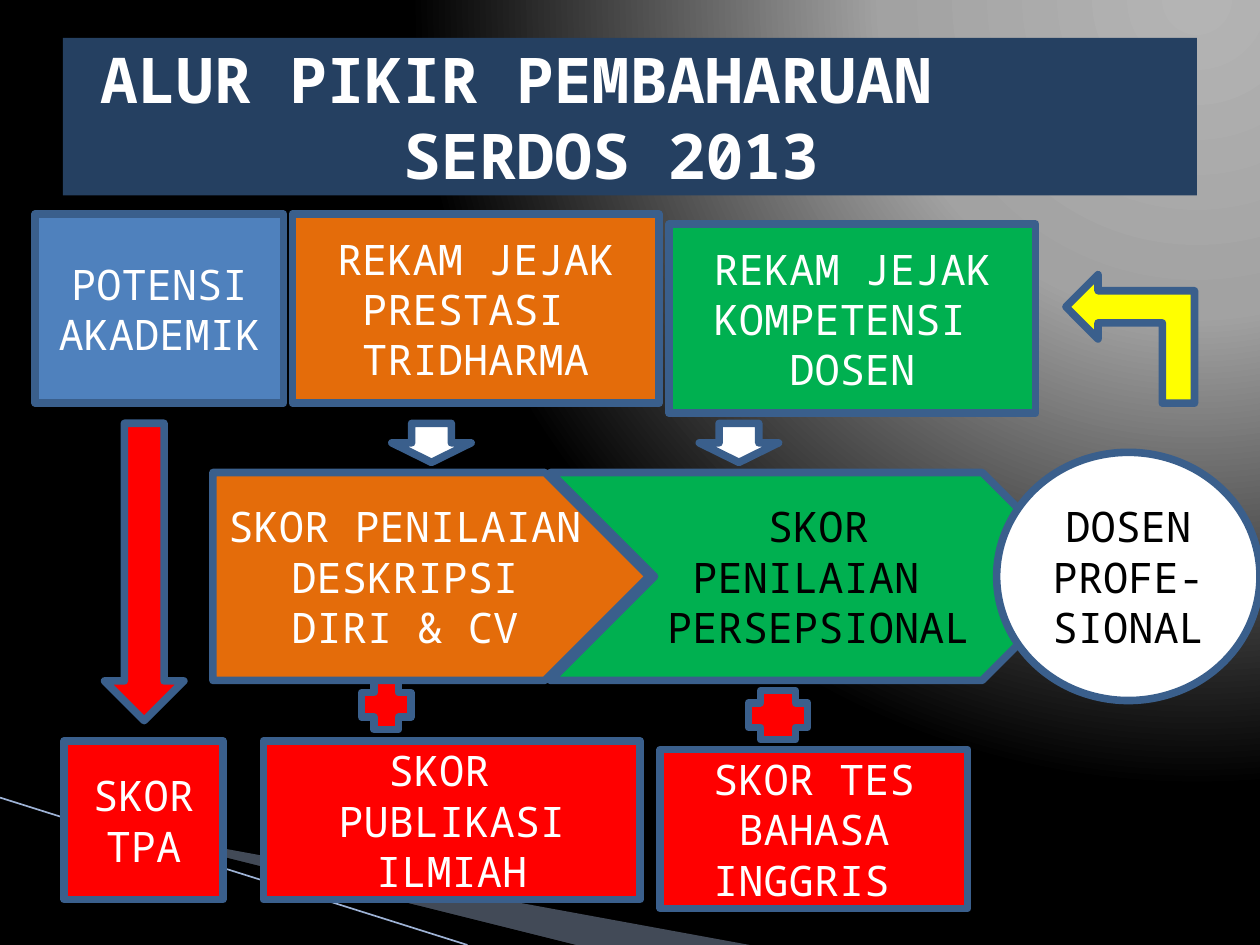
import lxml.etree
import pptx
import pptx.dml.color
import pptx.enum.shapes
import pptx.enum.text
import pptx.oxml
import pptx.oxml.ns
import pptx.util

Inches = pptx.util.Inches
Kind = pptx.enum.shapes.MSO_SHAPE
FONT = "Noto Sans Mono"
COLORS = {
    "navy": "254061", "outline": "3A5F8C", "blue": "4F81BD", "orange": "E46C0A",
    "green": "00B050", "red": "FF0000", "yellow": "FFFF00", "white": "FFFFFF",
    "black": "000000", "swoosh": "A7B9DB", "thin": "9EB3D6",
}

# Rows shared by several parts: (top, height)
TOP_ROW, ARROW_ROW = (1.7, 1.5), (3.36, 0.31)
SCORE_ROW, TEST_ROW = (3.75, 1.65), (5.88, 1.26)

# Title lines, each with the right margin that moves it off centre
TITLE_FRAME = (0.5, 0.3, 9, 1.25)
TITLE = [("ALUR PIKIR PEMBAHARUAN", 1.81), ("SERDOS 2013", 0.3)]

# Flow parts, back to front: kind, left, width, (top, height), fill, text colour, lines
PARTS = [
    (Kind.PARALLELOGRAM, 5.31, 2.91, (1.78, 1.5), "green", "white",
     ["REKAM JEJAK", "KOMPETENSI ", "DOSEN"]),
    (Kind.CHEVRON, 4.37, 4.25, SCORE_ROW, "green", "black",
     ["SKOR", "PENILAIAN ", "PERSEPSIONAL"]),
    (Kind.OVAL, 7.91, 2.09, (3.59, 1.97), "white", "black",
     ["DOSEN", "PROFE-", "SIONAL"]),
    (Kind.PARALLELOGRAM, 5.24, 2.44, (5.95, 1.26), "red", "white",
     ["SKOR TES", "BAHASA", "INGGRIS "]),
    (Kind.PARALLELOGRAM, 2.32, 2.91, TOP_ROW, "orange", "white",
     ["REKAM JEJAK", "PRESTASI ", "TRIDHARMA"]),
    (Kind.PARALLELOGRAM, 2.09, 2.99, TEST_ROW, "red", "white",
     ["SKOR ", "PUBLIKASI", "ILMIAH"]),
    (Kind.DOWN_ARROW, 3.11, 0.63, ARROW_ROW, "white", None, []),
    (Kind.DOWN_ARROW, 0.83, 0.63, (3.36, 2.36), "red", None, []),
    (Kind.DOWN_ARROW, 5.55, 0.63, ARROW_ROW, "white", None, []),
    (Kind.RECTANGLE, 0.51, 1.26, TEST_ROW, "red", "white", ["SKOR", "TPA"]),
    (Kind.CROSS, 2.87, 0.39, (5.4, 0.39), "red", None, []),
    (Kind.CROSS, 5.94, 0.47, (5.48, 0.39), "red", None, []),
    (Kind.BENT_UP_ARROW, 8.46, 1.02, (2.18, 1.02), "yellow", None, []),
    (Kind.RECTANGLE, 0.28, 1.97, TOP_ROW, "blue", "white", ["POTENSI", "AKADEMIK"]),
    (Kind.PENTAGON, 1.69, 3.46, SCORE_ROW, "orange", "white",
     ["SKOR PENILAIAN", "DESKRIPSI", "DIRI & CV"]),
]

# Background decoration: corner points, fill, opacity in percent
SWOOSHES = [
    ([(0.55, 6.51), (5.95, 7.5), (4.56, 7.5), (0.55, 6.5)], "swoosh", 40),
    ([(0.53, 6.49), (4.57, 7.5), (3.72, 7.5), (0.54, 6.5)], "black", 100),
]
BACKGROUND = [(0, "B4B4B4"), (40, "A2A2A2"), (100, "000000")]


def rgb(name):
    return pptx.dml.color.RGBColor.from_string(COLORS[name])


def paint(shape, fill, outlined):
    shape.shadow.inherit = False
    shape.fill.solid()
    shape.fill.fore_color.rgb = rgb(fill)
    if outlined:
        shape.line.color.rgb = rgb("outline")
        shape.line.width = pptx.util.Pt(4.33)
    else:
        shape.line.fill.background()


def prepare_text(shape):
    frame = shape.text_frame
    frame.word_wrap = True
    frame.vertical_anchor = pptx.enum.text.MSO_ANCHOR.MIDDLE
    frame.margin_left = frame.margin_right = Inches(0.05)
    return frame


def add_span(para, text, size, color, bold=False):
    para.alignment = pptx.enum.text.PP_ALIGN.CENTER
    span = para.add_run()
    span.text = text
    span.font.name = FONT
    span.font.size = pptx.util.Pt(size)
    span.font.bold = bold
    span.font.color.rgb = rgb(color)


def add_background(page):
    stops = "".join(f'<a:gs pos="{pos * 1000}"><a:srgbClr val="{color}"/></a:gs>'
                    for pos, color in BACKGROUND)
    gradient = pptx.oxml.parse_xml(
        f'<a:gradFill {pptx.oxml.ns.nsdecls("a")} rotWithShape="1"><a:gsLst>{stops}</a:gsLst>'
        '<a:path path="circle"><a:fillToRect l="95000" t="-106000" r="5000" b="206000"/>'
        '</a:path></a:gradFill>')
    fill = page.background.fill
    fill.solid()
    solid = page.element.find(".//" + pptx.oxml.ns.qn("a:solidFill"))
    solid.getparent().replace(solid, gradient)


def add_decoration(page):
    for points, color, opacity in SWOOSHES:
        corners = [(Inches(x), Inches(y)) for x, y in points]
        builder = page.shapes.build_freeform(*corners[0])
        builder.add_line_segments(corners[1:], close=True)
        swoosh = builder.convert_to_shape()
        paint(swoosh, color, False)
        if opacity < 100:
            tint = swoosh.element.spPr.find(".//" + pptx.oxml.ns.qn("a:srgbClr"))
            lxml.etree.SubElement(tint, pptx.oxml.ns.qn("a:alpha"), val=str(opacity * 1000))
    line = page.shapes.add_connector(
        pptx.enum.shapes.MSO_CONNECTOR.STRAIGHT,
        Inches(0), Inches(6.33), Inches(3.71), Inches(7.5))
    line.line.color.rgb = rgb("thin")
    line.line.width = pptx.util.Pt(0.95)
    lxml.etree.SubElement(line.element.spPr, pptx.oxml.ns.qn("a:effectLst"))


def add_title(page):
    box = page.shapes.add_shape(Kind.RECTANGLE, *map(Inches, TITLE_FRAME))
    paint(box, "navy", False)
    frame = prepare_text(box)
    for index, (text, margin) in enumerate(TITLE):
        para = frame.add_paragraph() if index else frame.paragraphs[0]
        para._p.get_or_add_pPr().set("marR", str(Inches(margin)))
        add_span(para, text, 36, "white", True)


def add_part(page, kind, left, width, row, fill, color, lines):
    top, height = row
    shape = page.shapes.add_shape(kind, *map(Inches, (left, top, width, height)))
    paint(shape, fill, True)
    if kind == Kind.PARALLELOGRAM:
        shape.adjustments[0] = 0
    if kind == Kind.BENT_UP_ARROW:
        shape.rotation = 270
    if lines:
        para = prepare_text(shape).paragraphs[0]
        for index, text in enumerate(lines):
            if index:
                para.add_line_break()
            add_span(para, text, 24, color)


def main():
    deck = pptx.Presentation()
    deck.slide_width, deck.slide_height = Inches(10), Inches(7.5)
    page = deck.slides.add_slide(deck.slide_layouts[6])
    add_background(page)
    add_decoration(page)
    add_title(page)
    for part in PARTS:
        add_part(page, *part)
    deck.save("out.pptx")


if __name__ == "__main__":
    main()
